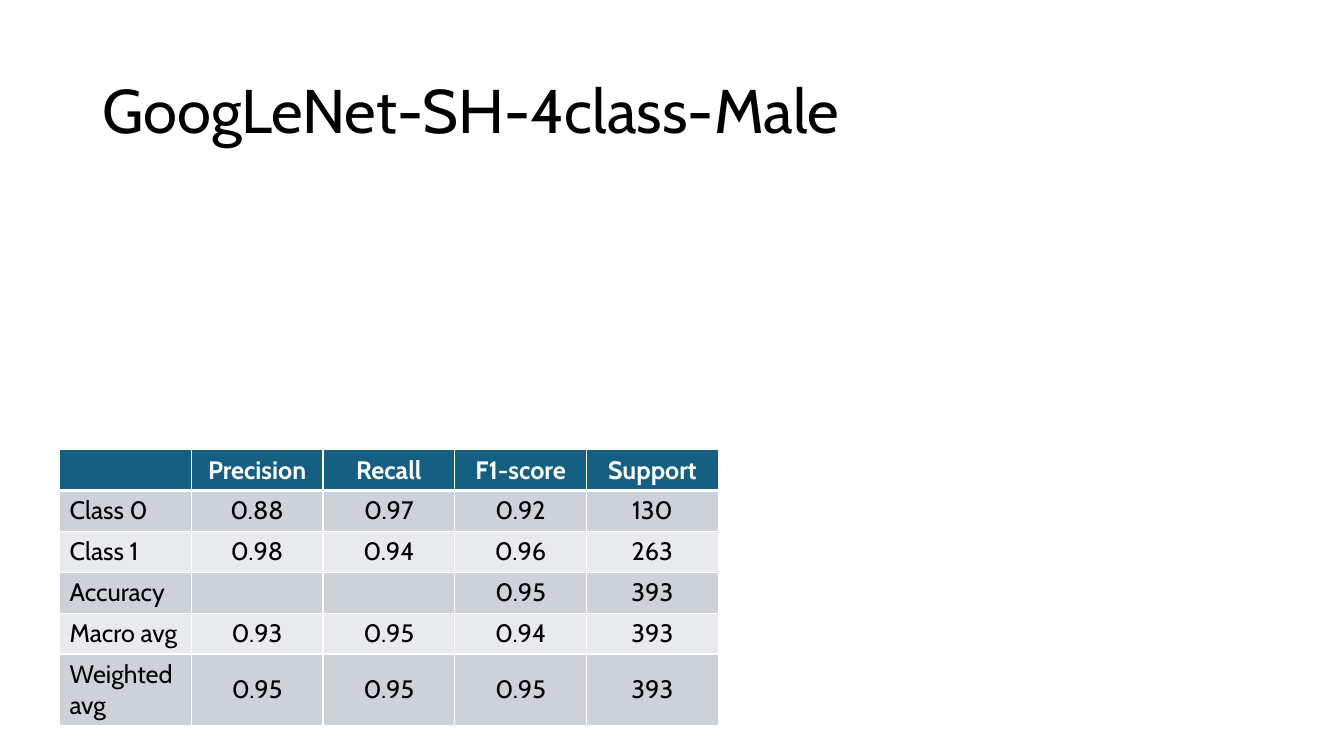
from lxml.etree import SubElement
from pptx import Presentation
from pptx.dml.color import RGBColor
from pptx.enum.text import MSO_ANCHOR as Anchor, PP_ALIGN as Align
from pptx.oxml.ns import qn
from pptx.util import Cm, Pt

BLACK = RGBColor(0x00, 0x00, 0x00)
WHITE = RGBColor(0xFF, 0xFF, 0xFF)
HEADER_BLUE = RGBColor(0x15, 0x60, 0x82)
BAND_DARK = RGBColor(0xCC, 0xD2, 0xD8)
BAND_LIGHT = RGBColor(0xE8, 0xEA, 0xED)

SCORES = [
    ["", "Precision", "Recall", "F1-score", "Support"],
    ["Class 0", "0.88", "0.97", "0.92", "130"],
    ["Class 1", "0.98", "0.94", "0.96", "263"],
    ["Accuracy", "", "", "0.95", "393"],
    ["Macro avg", "0.93", "0.95", "0.94", "393"],
    ["Weighted avg", "0.95", "0.95", "0.95", "393"],
]


class SlideBuilder:
    font = "Cabin"
    title_size = Pt(44)
    table_size = Pt(18)

    def __init__(self, deck):
        self.page = deck.slides.add_slide(deck.slide_layouts[5])

    def style(self, para, size, color, align, bold=False):
        para.alignment = align
        for span in para.runs:
            span.font.name = self.font
            span.font.size = size
            span.font.bold = bold
            span.font.color.rgb = color

    def title(self, text, left, top, width, height):
        box = self.page.shapes.title
        box.left, box.top, box.width, box.height = left, top, width, height
        frame = box.text_frame
        frame.text = text
        frame.vertical_anchor = Anchor.MIDDLE
        para = frame.paragraphs[0]
        para.line_spacing = 0.9
        self.style(para, self.title_size, BLACK, Align.LEFT)

    def borders(self, cell, top, bottom):
        """Draw white cell edges; must run before the cell is filled."""
        properties = cell._tc.get_or_add_tcPr()
        for side, points in (("L", 1), ("R", 1), ("T", top), ("B", bottom)):
            line = SubElement(properties, qn(f"a:ln{side}"), w=str(Pt(points)))
            fill = SubElement(line, qn("a:solidFill"))
            SubElement(fill, qn("a:srgbClr"), val=str(WHITE))

    def table(self, rows, left, top, column_width, row_height):
        count = len(rows[0])
        grid = self.page.shapes.add_table(
            len(rows), count, left, top,
            column_width * count, row_height * len(rows)).table
        for column in grid.columns:
            column.width = column_width
        for r, values in enumerate(rows):
            grid.rows[r].height = row_height
            header = r == 0
            band = BAND_DARK if r % 2 else BAND_LIGHT
            for c, value in enumerate(values):
                label = c == 0 and not header
                cell = grid.cell(r, c)
                self.borders(cell, 3 if r == 1 else 1, 3 if header else 1)
                cell.fill.solid()
                cell.fill.fore_color.rgb = HEADER_BLUE if header else band
                cell.vertical_anchor = Anchor.TOP if label else Anchor.MIDDLE
                cell.text_frame.text = value
                self.style(cell.text_frame.paragraphs[0], self.table_size,
                           WHITE if header else BLACK,
                           Align.LEFT if label else Align.CENTER, header)


def main():
    deck = Presentation()
    deck.slide_width, deck.slide_height = Cm(33.87), Cm(19.05)
    slide = SlideBuilder(deck)
    slide.title("GoogLeNet-SH-4class-Male", Cm(2.33), Cm(1.01), Cm(29.21), Cm(3.68))
    slide.table(SCORES, Cm(1.5), Cm(11.33), Cm(3.32), Cm(1.03))
    deck.save("out.pptx")


if __name__ == "__main__":
    main()
